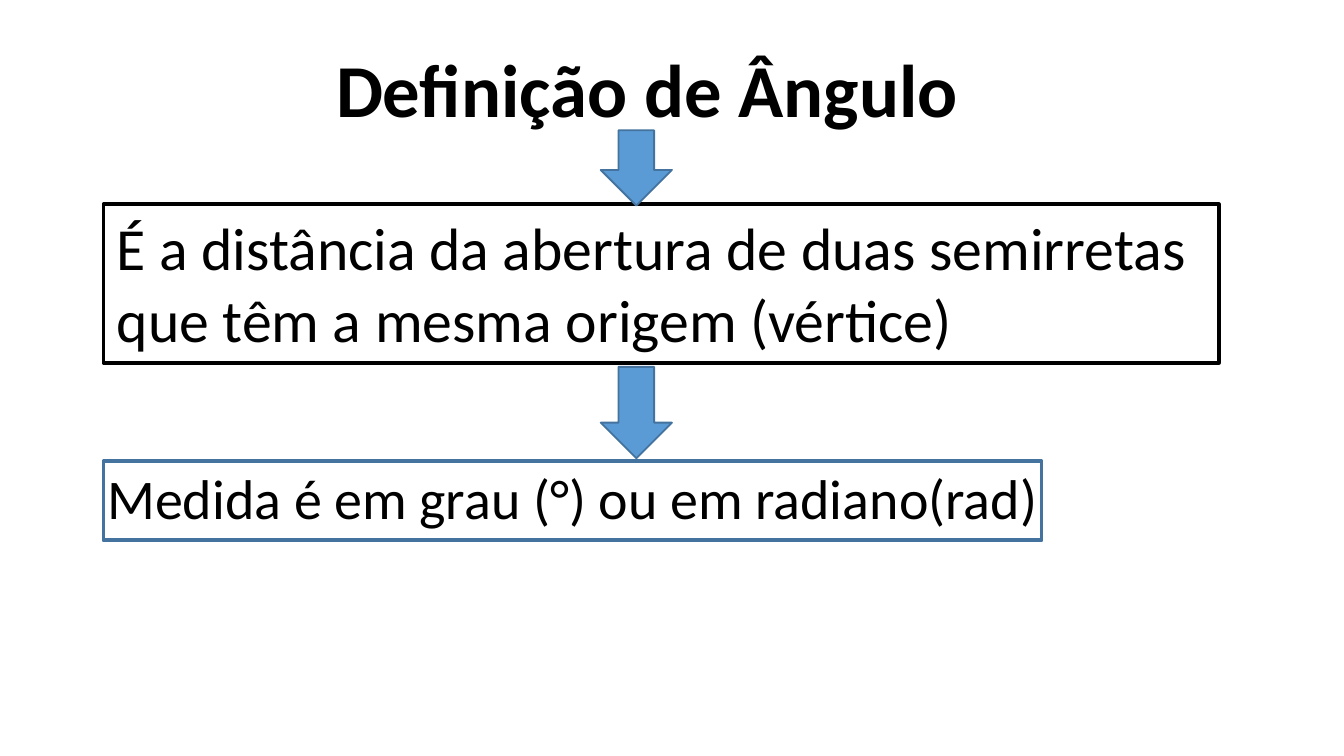
from pptx import Presentation
from pptx.dml.color import RGBColor
from pptx.enum import shapes, text
from pptx.util import Inches, Pt

# Content: text, place, size
TITLE = ("Definição de Ângulo", (2.4, 0.27, 4.89, 0.77), 40)
MEANING = ("É a distância da abertura de duas semirretas "
           "que têm a mesma origem (vértice)", (0.77, 1.52, 8.3, 1.18), 32)
UNITS = ("Medida é em grau (°) ou em radiano(rad)", (0.7, 3.4, 7.31, 0.61), 30)
FRAME = (0.77, 3.43, 6.98, 0.59)
ARROWS = [(0.97, 0.56), (2.73, 0.68)]  # top, height
ARROW_X, ARROW_W = 4.47, 0.53
WIDTH, RATIO = 10, 16 / 9
BLACK, BLUE, EDGE = "000000", "5B9BD5", "43739E"
KIND = shapes.MSO_SHAPE


def color(code):
    return RGBColor.from_string(code)


def place(box):
    return [Inches(n) for n in box]


def draw(kind, box, line, width, fill=None):
    item = slide.shapes.add_shape(kind, *place(box))
    item.shadow.inherit = False
    if fill:
        item.fill.solid()
        item.fill.fore_color.rgb = color(fill)
    else:
        item.fill.background()
    item.line.color.rgb = color(line)
    item.line.width = Pt(width)
    return item


def write(item, words, size, wrap=True, bold=False):
    frame = item.text_frame
    frame.text = words
    frame.word_wrap = wrap
    frame.vertical_anchor = text.MSO_ANCHOR.TOP
    para = frame.paragraphs[0]
    para.alignment = text.PP_ALIGN.LEFT
    font = para.runs[0].font
    for key, value in {"name": "Calibri", "size": Pt(size), "bold": bold}.items():
        setattr(font, key, value)
    font.color.rgb = color(BLACK)


deck = Presentation()
deck.slide_width, deck.slide_height = Inches(WIDTH), Inches(WIDTH / RATIO)
slide = deck.slides.add_slide(deck.slide_layouts[5])

# Title
words, box, size = TITLE
title = slide.shapes.title
title.left, title.top, title.width, title.height = place(box)
write(title, words, size, wrap=False, bold=True)

# Definition
words, box, size = MEANING
write(draw(KIND.RECTANGLE, box, BLACK, 2), words, size)

# Units of measure, with a frame around them
words, box, size = UNITS
write(slide.shapes.add_textbox(*place(box)), words, size, wrap=False)
draw(KIND.RECTANGLE, FRAME, EDGE, 2)

# Arrows from step to step
for top, height in ARROWS:
    draw(KIND.DOWN_ARROW, (ARROW_X, top, ARROW_W, height), EDGE, 1, BLUE)

deck.save("out.pptx")
